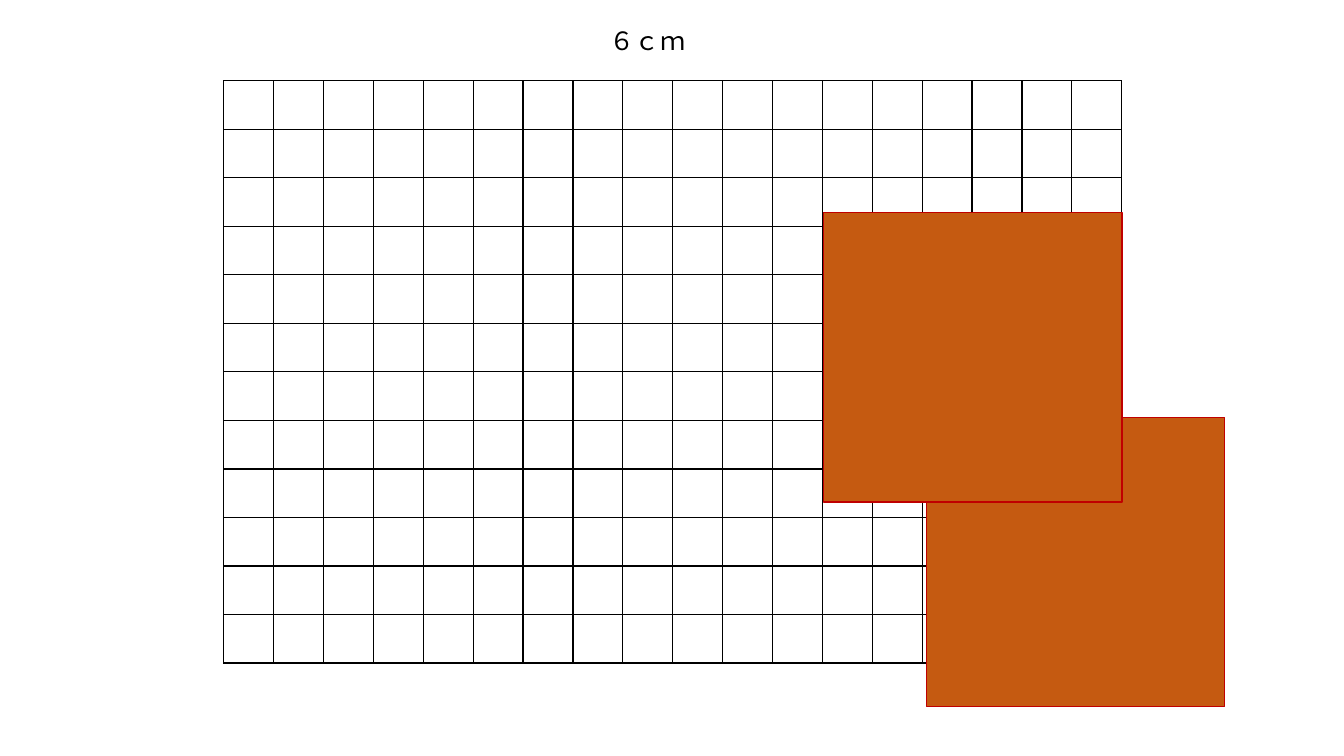
from lxml import etree
from pptx import Presentation
from pptx import util as u
from pptx.dml.color import RGBColor
from pptx.enum import shapes, text
from pptx.oxml import ns

BLACK = RGBColor(0x00, 0x00, 0x00)
WHITE = RGBColor(0xFF, 0xFF, 0xFF)
ORANGE = RGBColor(0xC5, 0x5A, 0x11)
RED = RGBColor(0xC0, 0x00, 0x00)

COLUMNS, ROWS = 18, 12
CELL_WIDTH, CELL_HEIGHT = 35.64, 34.68
SQUARE_WIDTH, SQUARE_HEIGHT = 213.12, 206.64


def write(frame, words, size=18, font="Calibri", color=BLACK):
    run = frame.paragraphs[0].add_run()
    run.text = words
    run.font.size = u.Pt(size)
    run.font.name = font
    run.font.color.rgb = color


def add_borders(cell, color, width):
    properties = cell._tc.get_or_add_tcPr()
    for side in ("a:lnL", "a:lnR", "a:lnT", "a:lnB"):
        line = etree.SubElement(properties, ns.qn(side), w=str(u.Pt(width)))
        fill = etree.SubElement(line, ns.qn("a:solidFill"))
        etree.SubElement(fill, ns.qn("a:srgbClr"), val=str(color))


class Sheet:
    """Holds the slide and the line style shared by its elements."""

    def __init__(self, slide, line_width=1):
        self.slide = slide
        self.line_width = line_width

    def grid(self, left, top):
        grid = self.slide.shapes.add_table(
            ROWS, COLUMNS, u.Pt(left), u.Pt(top),
            u.Pt(COLUMNS * CELL_WIDTH), u.Pt(ROWS * CELL_HEIGHT)).table
        grid.first_row = grid.horz_banding = False
        for column in grid.columns:
            column.width = u.Pt(CELL_WIDTH)
        for row in grid.rows:
            row.height = u.Pt(CELL_HEIGHT)
        for cell in grid.iter_cells():
            add_borders(cell, BLACK, self.line_width)
            cell.fill.solid()
            cell.fill.fore_color.rgb = WHITE

    def label(self, left, top, width, height, words, **style):
        label = self.slide.shapes.add_textbox(
            u.Pt(left), u.Pt(top), u.Pt(width), u.Pt(height))
        frame = label.text_frame
        frame.word_wrap = True
        frame.auto_size = text.MSO_AUTO_SIZE.SHAPE_TO_FIT_TEXT
        write(frame, words, **style)

    def square(self, left, top):
        square = self.slide.shapes.add_shape(
            shapes.MSO_SHAPE.RECTANGLE, u.Pt(left), u.Pt(top),
            u.Pt(SQUARE_WIDTH), u.Pt(SQUARE_HEIGHT))
        square.shadow.inherit = False
        square.fill.solid()
        square.fill.fore_color.rgb = ORANGE
        square.line.color.rgb = RED
        square.line.width = u.Pt(self.line_width)


def main():
    deck = Presentation()
    deck.slide_width, deck.slide_height = u.Pt(960), u.Pt(540)
    sheet = Sheet(deck.slides.add_slide(deck.slide_layouts[6]))
    sheet.grid(159.84, 57.6)
    sheet.label(428.4, 14.4, 80.64, 28.8, "６ｃｍ")
    for left, top in ((661.68, 298.08), (588.24, 151.92)):
        sheet.square(left, top)
    deck.save("out.pptx")


if __name__ == "__main__":
    main()
